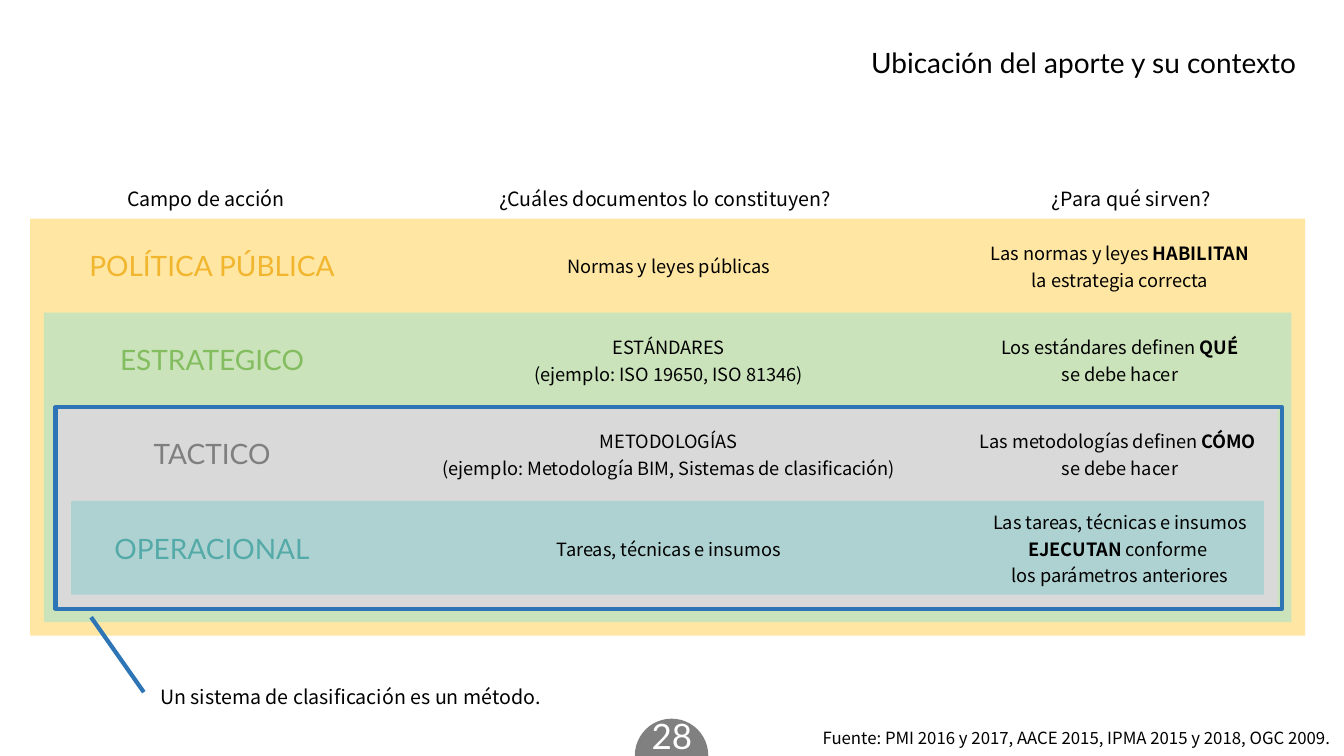
from pptx import Presentation
from pptx.dml.color import RGBColor
from pptx.enum.shapes import MSO_SHAPE
from pptx.enum.text import MSO_ANCHOR, PP_ALIGN
from pptx.util import Cm, Pt

SANS = "Noto Sans CJK SC"
HEAD = "Lato"
ROW = 2.37
LEVELS = [
    ("POLÍTICA PÚBLICA", "FFE7A3", "F2B52E", 8.33,
     ["Normas y leyes públicas"],
     ["Las normas y leyes *HABILITAN", "la estrategia correcta"]),
    ("ESTRATEGICO", "CAE3BB", "83BD5F", 7.14,
     ["ESTÁNDARES", "(ejemplo: ISO 19650, ISO 81346)"],
     ["Los estándares definen *QUÉ", "se debe hacer"]),
    ("TACTICO", "D9D9D9", "7F7F7F", 7.14,
     ["METODOLOGÍAS", "(ejemplo: Metodología BIM, Sistemas de clasificación)"],
     ["Las metodologías definen *CÓMO ", "se debe hacer"]),
    ("OPERACIONAL", "AED2D1", "54AAA8", 7.14,
     ["Tareas, técnicas e insumos"],
     ["Las tareas, técnicas e insumos", "*EJECUTAN* conforme ",
      "los parámetros anteriores"]),
]


def color(code):
    return RGBColor.from_string(code)


def style(run, size, font=SANS, ink="000000", bold=False):
    run.font.size = Pt(size)
    run.font.name = font
    run.font.color.rgb = color(ink)
    run.font.bold = bold


def add_text(slide, box, text, size, font=SANS, ink="000000",
             align=PP_ALIGN.CENTER, anchor=MSO_ANCHOR.TOP, pitch=None):
    frame = slide.shapes.add_textbox(*map(Cm, box)).text_frame
    frame.word_wrap = True
    frame.vertical_anchor = anchor
    frame.text = text
    para = frame.paragraphs[0]
    para.alignment = align
    if pitch:
        para.line_spacing = Pt(pitch)
    style(para.runs[0], size, font, ink)


def add_block(slide, kind, box, fill):
    shape = slide.shapes.add_shape(kind, *map(Cm, box))
    shape.shadow.inherit = False
    shape.fill.solid()
    shape.fill.fore_color.rgb = color(fill)
    shape.line.fill.background()


def add_bands(slide, box):
    left, top, width, height = box
    inset = 0.345
    for i, level in enumerate(LEVELS):
        band = (left + i * inset, top + i * ROW, width - 2 * i * inset,
                height - i * (ROW + inset))
        add_block(slide, MSO_SHAPE.RECTANGLE, band, level[1])


def fill_cell(cell, lines):
    cell.fill.background()
    cell.vertical_anchor = MSO_ANCHOR.MIDDLE
    cell.margin_left = cell.margin_right = cell.margin_top = Cm(0.02)
    cell.margin_bottom = 0
    frame = cell.text_frame
    for i, line in enumerate(lines):
        para = frame.add_paragraph() if i else frame.paragraphs[0]
        para.alignment = PP_ALIGN.CENTER
        for j, part in enumerate(line.split("*")):
            if part:
                run = para.add_run()
                run.text = part
                style(run, 13, bold=j % 2 == 1)


def add_grid(slide, box):
    table = slide.shapes.add_table(len(LEVELS), 2, *map(Cm, box)).table
    table.first_row = table.horz_banding = False
    table._tbl.tblPr[0].text = "{2D5ABB26-0587-4C30-8999-92F81FD0307C}"
    table.columns[0].width = Cm(13.44)
    table.columns[1].width = Cm(box[2] - 13.44)
    for i, level in enumerate(LEVELS):
        table.rows[i].height = Cm(ROW)
        for j, lines in enumerate(level[4:]):
            fill_cell(table.cell(i, j), lines)


def add_names(slide, box):
    left, top, width, height = box
    for i, (name, _, ink, wide, *_) in enumerate(LEVELS):
        spot = (left + (width - wide) / 2,
                top + i * ROW + (height - 1.12) / 2, wide, 1.12)
        add_text(slide, spot, name, 20, HEAD, ink, anchor=MSO_ANCHOR.MIDDLE)


def add_heads(slide, box):
    left, top, _, height = box
    for text, shift, width in [("Campo de acción", 0, 8),
                               ("¿Cuáles documentos lo constituyen?", 9.63, 11.89),
                               ("¿Para qué sirven?", 23.52, 7.59)]:
        add_text(slide, (left + shift, top, width, height), text, 14, pitch=22)


def add_note(slide, box):
    left, top, _, height = box
    frame = slide.shapes.add_shape(MSO_SHAPE.LINE_CALLOUT_1, *map(Cm, box))
    frame.shadow.inherit = False
    frame.fill.background()
    frame.line.color.rgb = color("2E75B6")
    frame.line.width = Pt(3)
    for i, value in enumerate([1.042, 0.029, 1.414, 0.072]):
        frame.adjustments[i] = value
    spot = (left + 2.39, top + height + 1.6, 11.89, 0.99)
    add_text(slide, spot, "Un sistema de clasificación es un método.", 14,
             align=PP_ALIGN.LEFT, pitch=22)


def add_foot(slide, box):
    left, top, width, _ = box
    add_block(slide, MSO_SHAPE.FLOWCHART_CONNECTOR,
              (left + 0.1, top + 0.23, 1.85, 1.85), "808080")
    add_text(slide, (left, top, 2.06, 1.32), "28", 25, HEAD, "FFFFFF")
    add_text(slide, (left + width - 14.12, top + 0.33, 14.12, 0.76),
             "Fuente: PMI 2016 y 2017, AACE 2015, IPMA 2015 y 2018, OGC 2009.",
             12, align=PP_ALIGN.RIGHT)


def main():
    deck = Presentation()
    deck.slide_width = Cm(33.87)
    deck.slide_height = Cm(19.05)
    slide = deck.slides.add_slide(deck.slide_layouts[6])
    add_bands(slide, (0.76, 5.51, 32.13, 10.51))
    add_grid(slide, (10.13, 5.51, 22.74, 4 * ROW))
    add_names(slide, (1.18, 5.51, 8.33, ROW))
    add_heads(slide, (1.19, 4.39, 31.11, 0.99))
    add_note(slide, (1.4, 10.26, 30.91, 5.08))
    add_text(slide, (18.77, 1.02, 14.15, 1.12),
             "Ubicación del aporte y su contexto", 20, HEAD, align=PP_ALIGN.RIGHT)
    add_foot(slide, (15.9, 17.88, 17.88, 1.17))
    deck.save("out.pptx")


if __name__ == "__main__":
    main()
